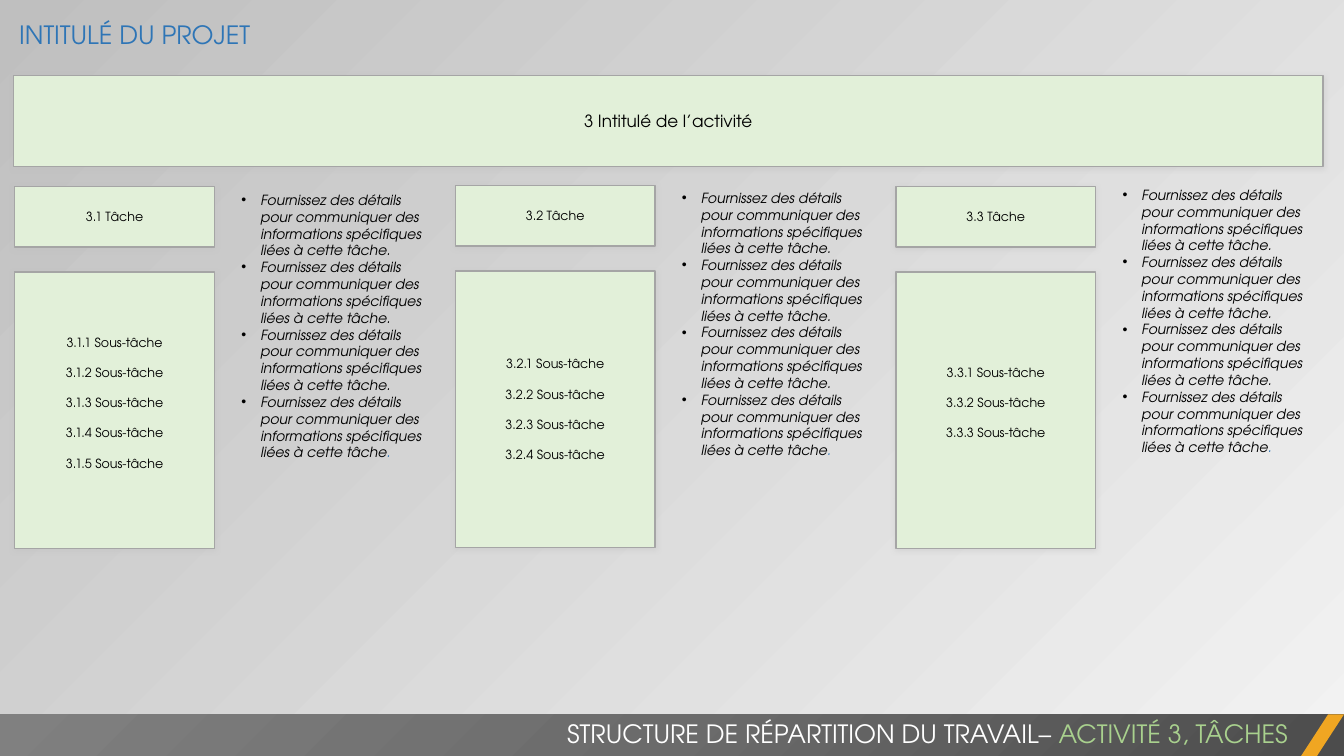
from lxml.etree import SubElement
from pptx import Presentation
from pptx.dml.color import RGBColor
from pptx.enum.shapes import MSO_SHAPE as Shape
from pptx.enum.text import MSO_ANCHOR as Anchor, MSO_AUTO_SIZE as Fit, PP_ALIGN as Align
from pptx.oxml.ns import qn
from pptx.util import Inches, Pt

DETAIL = "Fournissez des détails pour communiquer des informations spécifiques liées à cette tâche"
TASKS = [(5, 24.67, 24.67, 14.4), (4, 24.53, 24.4, 3.6), (3, 24.67, 24, 14.4)]
PITCH = 32.78


def color(value):
    return RGBColor.from_string(value)


def node(parent, tag, **attrs):
    return SubElement(parent, qn(tag), {k: str(v) for k, v in attrs.items()})


class Deck:
    font = "TeX Gyre Adventor"
    black, blue, white, lime = "000000", "2E75B6", "FFFFFF", "A9D18E"
    green, gray, shade, orange = "E2F0D9", "A5A5A5", "BFBFBF", "F0A622"

    def __init__(self):
        self.prs = Presentation()
        self.prs.slide_width, self.prs.slide_height = Inches(13.33), Inches(7.5)
        self.s = self.prs.slides.add_slide(self.prs.slide_layouts[5])

    def area(self, x, y, w, h):
        across, down = self.prs.slide_width / 100, self.prs.slide_height / 100
        return int(x * across), int(y * down), int(w * across), int(h * down)

    def gradient(self, fill, owner, stops):
        fill.gradient()
        grad = owner.xpath(".//a:gradFill")[0]
        for child in list(grad):
            grad.remove(child)
        gs_list = node(grad, "a:gsLst")
        for pos, value, alpha in stops:
            clr = node(node(gs_list, "a:gs", pos=pos * 1000), "a:srgbClr", val=value)
            if alpha < 100:
                node(clr, "a:alpha", val=alpha * 1000)
        return grad

    def background(self, stops, angle):
        grad = self.gradient(self.s.background.fill, self.s.element, stops)
        node(grad, "a:lin", ang=angle * 60000, scaled=0)

    def shape(self, kind, box, fill=None):
        sp = self.s.shapes.add_shape(kind, *self.area(*box))
        sp.shadow.inherit = False
        sp.line.fill.background()
        if fill:
            sp.fill.solid()
            sp.fill.fore_color.rgb = color(fill)
        return sp

    def band(self, box, stops):
        sp = self.shape(Shape.RECTANGLE, box)
        grad = self.gradient(sp.fill, sp.element, stops)
        node(node(grad, "a:path", path="circle"), "a:fillToRect", l=100000, t=100000)

    def run(self, p, text, size, value, italic=False):
        r = p.add_run()
        r.text = text
        r.font.name, r.font.size, r.font.italic = self.font, Pt(size), italic
        r.font.color.rgb = color(value)

    def card(self, box, lines, size, gap=0, bottom=3.6):
        sp = self.shape(Shape.RECTANGLE, box, self.green)
        sp.line.color.rgb, sp.line.width = color(self.gray), Pt(1)
        effects = sp.element.spPr.find(qn("a:effectLst"))
        shadow = node(effects, "a:outerShdw", blurRad=Pt(4), dist=Pt(1), dir=5400000, rotWithShape=0)
        node(node(shadow, "a:srgbClr", val=self.shade), "a:alpha", val=40000)
        tf = sp.text_frame
        tf.vertical_anchor, tf.margin_bottom = Anchor.MIDDLE, Pt(bottom)
        for i, line in enumerate(lines):
            p = tf.add_paragraph() if i else tf.paragraphs[0]
            p.alignment = Align.CENTER
            if i < len(lines) - 1:
                p.space_after = Pt(gap)
            self.run(p, line, size, self.black)

    def frame(self, sp):
        tf = sp.text_frame
        tf.word_wrap, tf.auto_size = True, Fit.SHAPE_TO_FIT_TEXT
        tf.vertical_anchor = Anchor.TOP
        return tf

    def textbox(self, box):
        return self.frame(self.s.shapes.add_textbox(*self.area(*box)))

    def title(self, box, text):
        sp = self.s.shapes.title
        sp.left, sp.top, sp.width, sp.height = self.area(*box)
        p = self.frame(sp).paragraphs[0]
        p.alignment = Align.LEFT
        self.run(p, text, 18, self.blue)

    def caption(self, box, runs):
        p = self.textbox(box).paragraphs[0]
        p.alignment = Align.RIGHT
        for text, value in runs:
            self.run(p, text, 18, value)

    def details(self, box, count):
        tf = self.textbox(box)
        for i in range(count):
            p = tf.add_paragraph() if i else tf.paragraphs[0]
            pPr = p._p.get_or_add_pPr()
            pPr.set("marL", str(Inches(0.19)))
            pPr.set("indent", str(-Inches(0.19)))
            node(pPr, "a:buFont", typeface="Arial")
            node(pPr, "a:buChar", char="•")
            last = i == count - 1
            self.run(p, DETAIL if last else DETAIL + ".", 10, self.black, True)
            if last:
                self.run(p, ".", 10, self.blue, True)


def main():
    d = Deck()
    d.background([(0, "F2F2F2", 40), (100, d.shade, 100)], 225)
    d.title((0.68, 1.87, 75.84, 5.33), "INTITULÉ DU PROJET")
    d.card((1, 10, 97.45, 12), ["3 Intitulé de l’activité"], 12)
    for n, (count, top, text_top, bottom) in enumerate(TASKS, 1):
        x = 1.1 + (n - 1) * PITCH
        d.card((x, top, 14.85, 8), [f"3.{n} Tâche"], 9)
        subtasks = [f"3.{n}.{k} Sous-tâche" for k in range(1, count + 1)]
        d.card((x, top + 11.33, 14.85, 36.53), subtasks, 9, 10.8, bottom)
        d.details((x + 16.12, text_top, 15.45, 40), 4)
    d.band((0, 94.5, 100, 5.6), [(0, "4C4C4C", 100), (50, "6B6B6B", 100), (100, "808080", 100)])
    accent = d.shape(Shape.PARALLELOGRAM, (96.77, 94.5, 3.23, 5.6), d.orange)
    accent.adjustments[0] = 0.65
    d.caption((7.43, 94.4, 89.12, 5.33), [
        ("STRUCTURE DE RÉPARTITION DU TRAVAIL– ", d.white),
        ("ACTIVITÉ 3, TÂCHES", d.lime),
    ])
    d.prs.save("out.pptx")


if __name__ == "__main__":
    main()
